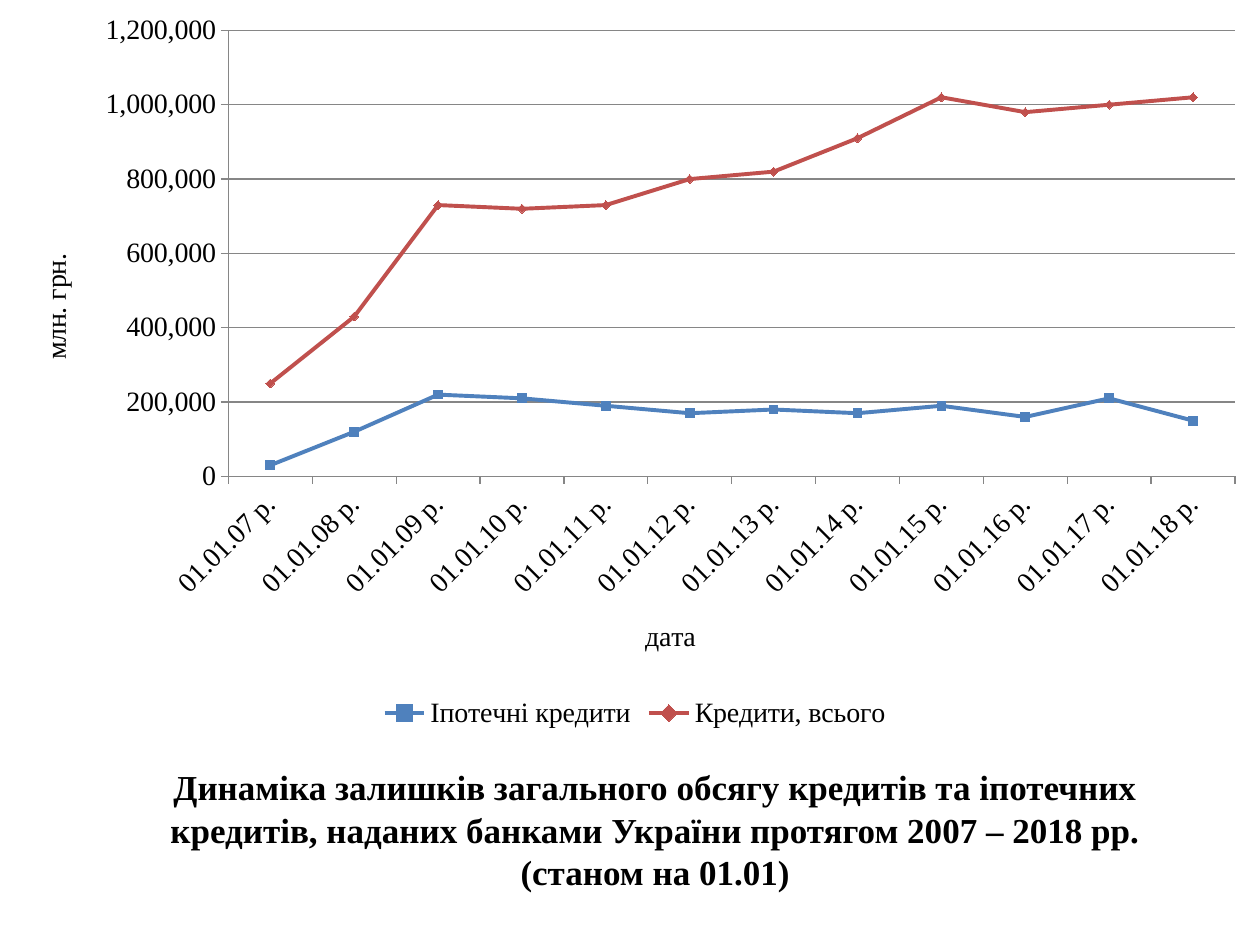
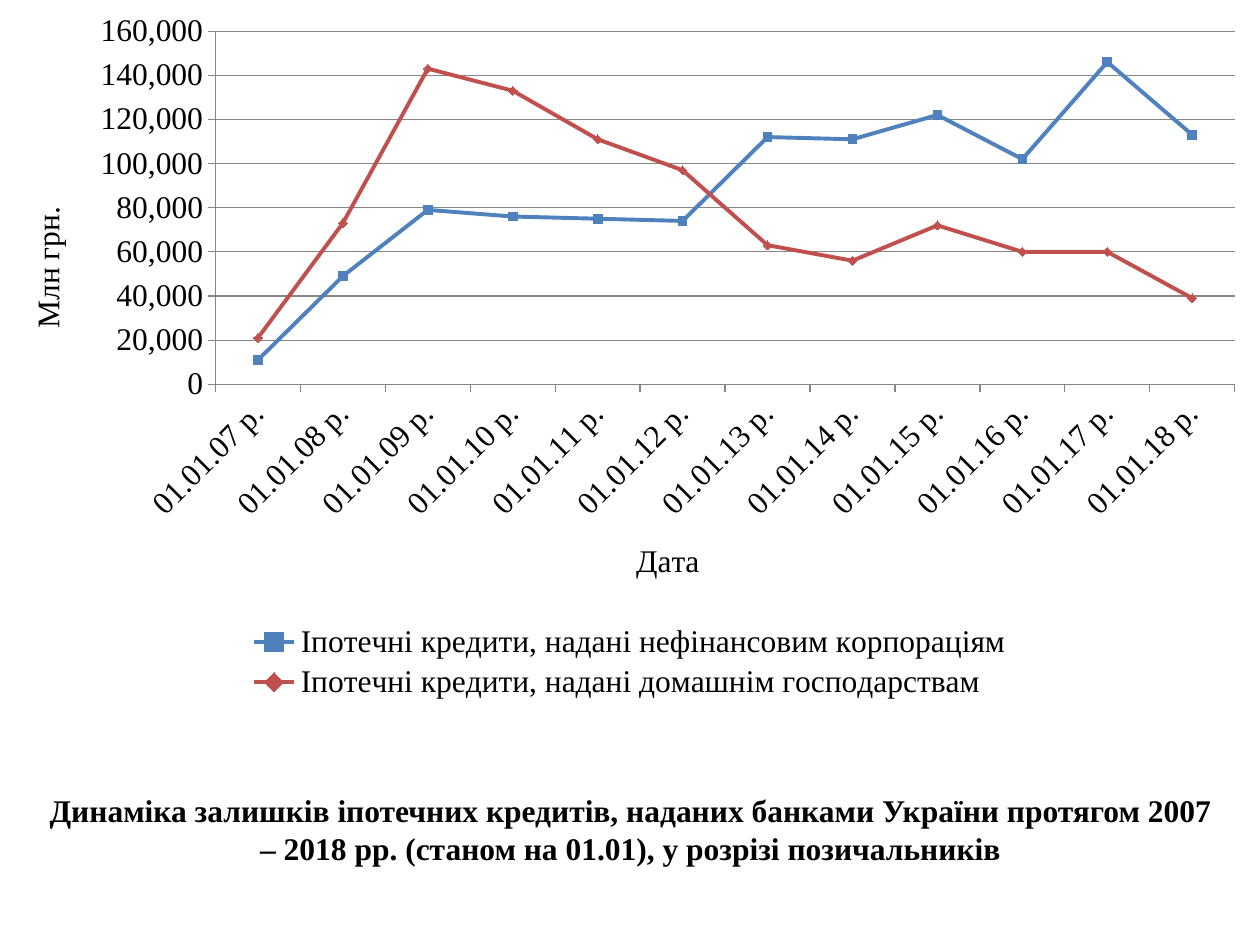
from pptx import Presentation
from pptx.chart.data import CategoryChartData
from pptx.dml.color import RGBColor
from pptx.enum.chart import XL_CHART_TYPE, XL_LEGEND_POSITION, XL_MARKER_STYLE, XL_TICK_MARK
from pptx.enum.text import MSO_AUTO_SIZE, PP_ALIGN
from pptx.util import Inches, Pt

LINE_MARKERS = XL_CHART_TYPE.LINE_MARKERS
BOTTOM = XL_LEGEND_POSITION.BOTTOM
OUTSIDE = XL_TICK_MARK.OUTSIDE
CENTER = PP_ALIGN.CENTER
FIT_SHAPE = MSO_AUTO_SIZE.SHAPE_TO_FIT_TEXT

FONT = "Times New Roman"
BLACK, GREY = "000000", "868686"
SERIES_STYLES = [("4F81BD", XL_MARKER_STYLE.SQUARE), ("C0504D", XL_MARKER_STYLE.DIAMOND)]
DATES = [f"01.01.{year:02d} р." for year in range(7, 19)]


def color(value):
    return RGBColor.from_string(value)


class Page:
    """Current slide together with the shared text, axis and series style."""

    def __init__(self, deck):
        self.slide = deck.slides.add_slide(deck.slide_layouts[6])

    def style_font(self, font, size, bold=False):
        font.name = FONT
        font.size = Pt(size)
        font.bold = bold
        font.color.rgb = color(BLACK)

    def caption(self, area, lines, size):
        box = self.slide.shapes.add_textbox(*map(Inches, area))
        frame = box.text_frame
        frame.word_wrap = True
        frame.auto_size = FIT_SHAPE
        frame.text = "\n".join(lines)
        for para in frame.paragraphs:
            para.alignment = CENTER
            self.style_font(para.font, size, bold=True)

    def style_axis(self, axis, title, size, title_turn, label_turn):
        """Turns are in 60000ths of a degree."""
        frame = axis.axis_title.text_frame
        frame.text = title
        self.style_font(frame.paragraphs[0].font, size)
        frame._txBody.bodyPr.set("rot", str(title_turn))
        self.style_font(axis.tick_labels.font, size)
        axis._element.txPr.bodyPr.set("rot", str(label_turn))
        axis.major_tick_mark = OUTSIDE
        axis.format.line.color.rgb = color(GREY)

    def line_chart(self, area, date_title, value_title, series_values, size, top, step):
        data = CategoryChartData(number_format="#,##0")
        data.categories = DATES
        for name, thousands in series_values.items():
            data.add_series(name, [value * 1000 for value in thousands])
        chart = self.slide.shapes.add_chart(LINE_MARKERS, *map(Inches, area), data).chart
        self.style_font(chart.font, size)
        chart.has_title = False
        chart.has_legend = True
        chart.legend.position = BOTTOM
        chart.legend.include_in_layout = False
        self.style_font(chart.legend.font, size)

        self.style_axis(chart.category_axis, date_title, size, 0, -2700000)
        values = chart.value_axis
        self.style_axis(values, value_title, size, -5400000, 0)
        values.minimum_scale, values.maximum_scale, values.major_unit = 0, top, step
        values.tick_labels.number_format = "#,##0"
        values.tick_labels.number_format_is_linked = False
        values.has_major_gridlines = True
        values.major_gridlines.format.line.color.rgb = color(GREY)

        plot = chart.plots[0]
        plot.vary_by_categories = False
        for series, (tint, marker) in zip(plot.series, SERIES_STYLES):
            series.smooth = False
            series.format.line.color.rgb = color(tint)
            series.format.line.width = Pt(2.25)
            series.marker.style = marker
            series.marker.size = 5
            series.marker.format.fill.solid()
            series.marker.format.fill.fore_color.rgb = color(tint)
            series.marker.format.line.color.rgb = color(tint)


def total_credit_page(deck):
    page = Page(deck)
    page.line_chart((0.08, 0, 9.92, 5.83), "дата", "млн. грн.", {
        "Іпотечні кредити": [30, 120, 220, 210, 190, 170, 180, 170, 190, 160, 210, 150],
        "Кредити, всього": [250, 430, 730, 720, 730, 800, 820, 910, 1020, 980, 1000, 1020],
    }, size=16, top=1200000, step=200000)
    page.caption((0.67, 6.03, 9.06, 1.11), [
        "Динаміка залишків загального обсягу кредитів та іпотечних кредитів, "
        "наданих банками України протягом 2007 – 2018 рр.",
        "(станом на 01.01)",
    ], size=20)


def borrowers_page(deck):
    page = Page(deck)
    page.line_chart((0, 0, 10, 5.6), "Дата", "Млн грн.", {
        "Іпотечні кредити, надані нефінансовим корпораціям":
            [11, 49, 79, 76, 75, 74, 112, 111, 122, 102, 146, 113],
        "Іпотечні кредити, надані домашнім господарствам":
            [21, 73, 143, 133, 111, 97, 63, 56, 72, 60, 60, 39],
    }, size=18, top=160000, step=20000)
    page.caption((0.28, 6.23, 9.45, 0.71), [
        "Динаміка залишків іпотечних кредитів, наданих банками України "
        "протягом 2007 – 2018 рр. (станом на 01.01), у розрізі позичальників",
    ], size=18)


def main():
    deck = Presentation()
    deck.slide_width, deck.slide_height = Inches(10), Inches(7.5)
    total_credit_page(deck)
    borrowers_page(deck)
    deck.save("out.pptx")


if __name__ == "__main__":
    main()
